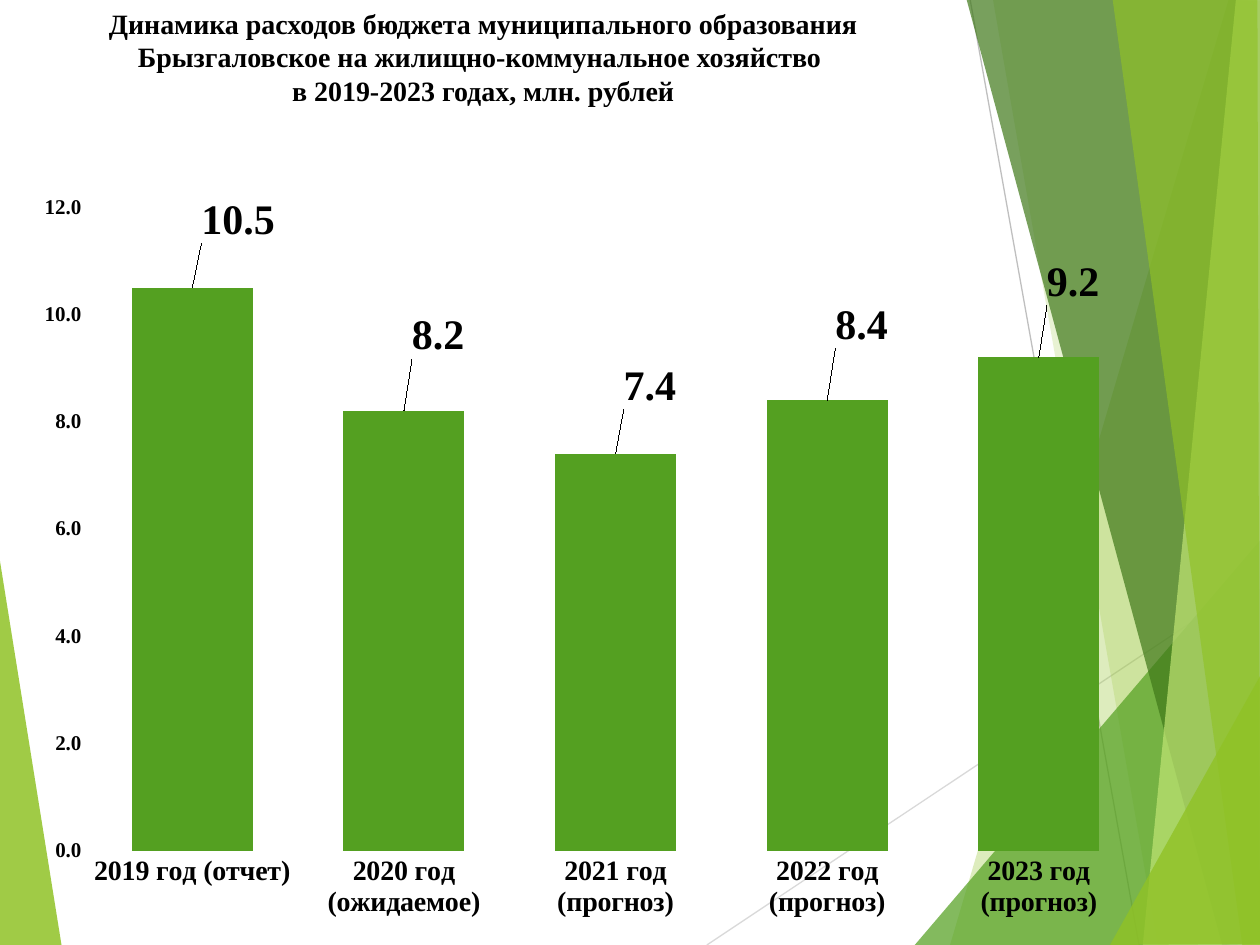
from lxml import etree
from pptx import Presentation
from pptx.chart.data import CategoryChartData
from pptx.dml.color import RGBColor
from pptx.enum.chart import XL_CHART_TYPE, XL_LABEL_POSITION, XL_TICK_MARK
from pptx.enum.shapes import MSO_CONNECTOR
from pptx.enum.text import MSO_ANCHOR, PP_ALIGN
from pptx.oxml import parse_xml
from pptx.oxml.ns import nsdecls, qn
from pptx.util import Inches, Pt

COLUMN = XL_CHART_TYPE.COLUMN_CLUSTERED
OUTSIDE_END = XL_LABEL_POSITION.OUTSIDE_END
NO_TICK = XL_TICK_MARK.NONE
STRAIGHT = MSO_CONNECTOR.STRAIGHT
TOP = MSO_ANCHOR.TOP
CENTER = PP_ALIGN.CENTER


def rgb(value):
    return RGBColor.from_string(value)


def set_font(font, size):
    for name, value in {"name": "Times New Roman", "size": Pt(size), "bold": True}.items():
        setattr(font, name, value)
    font.color.rgb = rgb("000000")


prs = Presentation()
prs.slide_width, prs.slide_height = Inches(10), Inches(7.5)
s = prs.slides.add_slide(prs.slide_layouts[6])

left_facet = ([(-0.01, 4.39), (0.49, 7.51), (-0.01, 7.5)], "90C226", 85)
lines = [((5.61, 7.5), (10.01, 4.57), "D9D9D9"), ((7.7, 0), (9.04, 7.5), "BFBFBF")]
right_facets = [
    ([(9.75, 0), (7.54, 7.5), (10.02, 7.51), (10.01, 0.01)], "90C226", 30),
    ([(7.88, -0.01), (9.19, 7.5), (10.01, 7.5), (10.01, -0.01)], "90C226", 20),
    ([(7.26, 7.5), (10, 4.29), (10.01, 7.5)], "54A021", 72),
    ([(7.67, -0.01), (9.7, 7.5), (10.01, 7.49), (10.01, -0.01)], "3F7819", 70),
    ([(9.81, -0.01), (9.07, 7.5), (10.01, 7.5), (10, -0.01)], "C0E474", 70),
    ([(8.83, -0.01), (9.86, 7.5), (10, 7.5), (9.98, -0.01)], "90C226", 65),
    ([(8.81, 7.5), (10.01, 5.35), (10.01, 7.49)], "90C226", 80),
]

for start, end, color in lines:
    line = s.shapes.add_connector(STRAIGHT, *(Inches(v) for v in start + end))
    line.line.color.rgb = rgb(color)
    line.line.width = Pt(0.75)
    etree.SubElement(line._element.spPr, qn("a:effectLst"))

for points, color, opacity in [left_facet] + right_facets:
    corners = [(Inches(x), Inches(y)) for x, y in points]
    builder = s.shapes.build_freeform(*corners[0])
    builder.add_line_segments(corners[1:], close=True)
    sp = builder.convert_to_shape()
    sp.shadow.inherit = False
    sp.line.fill.background()
    sp.fill.solid()
    sp.fill.fore_color.rgb = rgb(color)
    clr = sp._element.spPr.find(qn("a:solidFill"))[0]
    etree.SubElement(clr, qn("a:alpha"), val=str(opacity * 1000))

title = s.shapes.add_textbox(0, 0, Inches(7.67), Inches(1.21))
tf = title.text_frame
tf.word_wrap = True
tf.vertical_anchor = TOP
p = tf.paragraphs[0]
p.alignment = CENTER
p.text = ("Динамика расходов бюджета муниципального образования Брызгаловское "
          "на жилищно-коммунальное хозяйство \vв 2019-2023 годах, млн. рублей")
for r in p.runs:
    set_font(r.font, 16)

data = CategoryChartData(number_format="0.0")
data.categories = ["2019 год (отчет)", "2020 год (ожидаемое)", "2021 год (прогноз)",
                   "2022 год (прогноз)", "2023 год (прогноз)"]
data.add_series("Series 1", [10.5, 8.2, 7.4, 8.4, 9.2])
chart = s.shapes.add_chart(COLUMN, Inches(0.15), Inches(1.31), Inches(9.09), Inches(6.19), data).chart
chart.has_title = False
chart.has_legend = False
chart.font.name = "Lato"
chart.font.size = Pt(10)
chart.font.color.rgb = rgb("000000")

for axis, size in ((chart.category_axis, 16), (chart.value_axis, 12)):
    axis.major_tick_mark = axis.minor_tick_mark = NO_TICK
    axis.has_major_gridlines = False
    axis.format.line.fill.background()
    set_font(axis.tick_labels.font, size)

axis = chart.value_axis
axis.minimum_scale, axis.maximum_scale, axis.major_unit = 0, 12, 2
axis.tick_labels.number_format = "0.0"
axis.tick_labels.number_format_is_linked = False

plot = chart.plots[0]
plot.gap_width = 75
plot.vary_by_categories = False
series = plot.series[0]
series.format.fill.solid()
series.format.fill.fore_color.rgb = rgb("54A021")

labels = series.data_labels
labels.show_value = True
labels.number_format = "0.0"
labels.number_format_is_linked = False
labels.position = OUTSIDE_END
set_font(labels.font, 24)

offsets = [(0.04, -0.05), (0.03, -0.06), (0.03, -0.05), (0.03, -0.06), (0.03, -0.06)]
for i, (x, y) in enumerate(offsets):
    label = series.points[i].data_label
    label.position = OUTSIDE_END
    set_font(label.font, 24)
for dlbl, (x, y) in zip(labels._element.findall(qn("c:dLbl")), offsets):
    dlbl.insert(1, parse_xml(
        f'<c:layout {nsdecls("c")}><c:manualLayout><c:x val="{x}"/><c:y val="{y}"/>'
        '</c:manualLayout></c:layout>'))

area = chart._chartSpace.chart.plotArea
for old in area.findall(qn("c:layout")):
    area.remove(old)
area.insert(0, parse_xml(
    f'<c:layout {nsdecls("c")}><c:manualLayout><c:layoutTarget val="inner"/>'
    '<c:xMode val="edge"/><c:yMode val="edge"/><c:x val="0.059"/><c:y val="0.054"/>'
    '<c:w val="0.924"/><c:h val="0.825"/></c:manualLayout></c:layout>'))

prs.save("out.pptx")
